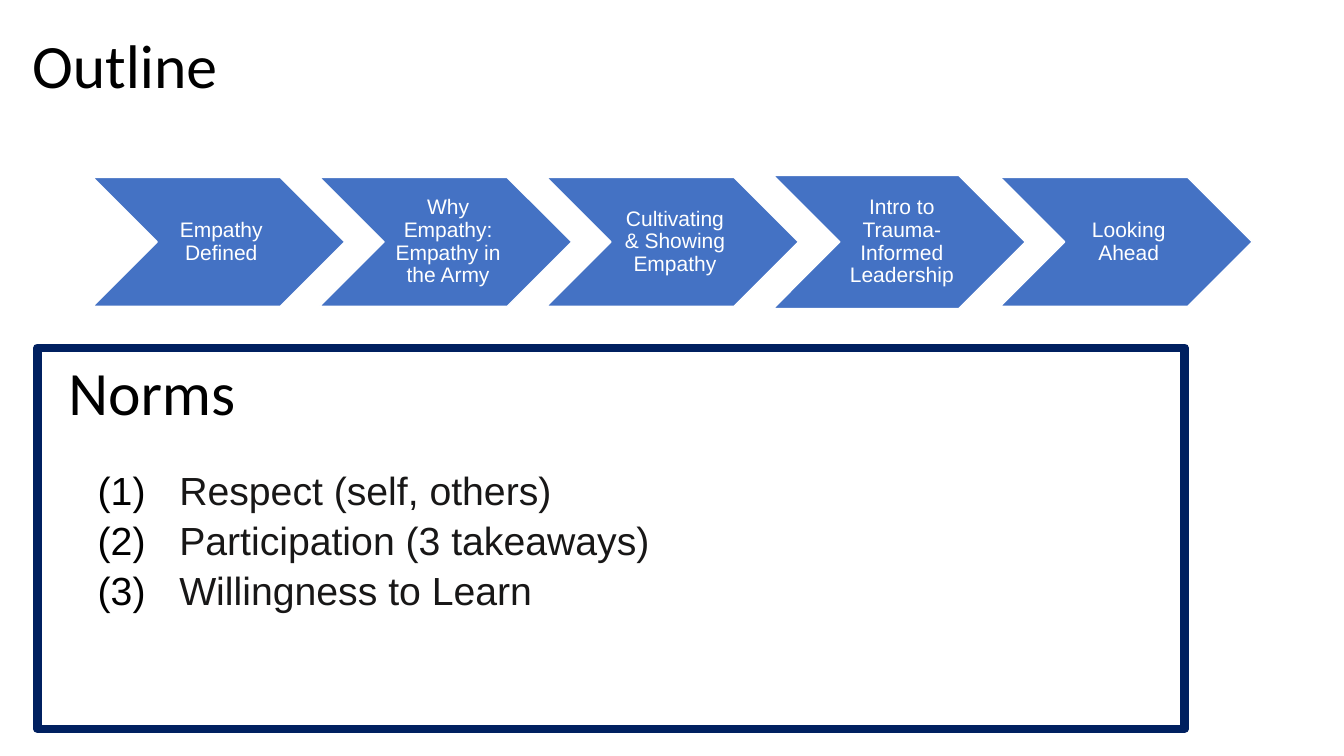
from lxml.etree import SubElement
from pptx import Presentation
from pptx.dml.color import RGBColor
from pptx.enum.shapes import MSO_SHAPE as Shape
from pptx.enum.text import MSO_ANCHOR as Anchor, PP_ALIGN as Align
from pptx.oxml.ns import qn
from pptx.util import Inches, Pt

BLACK = RGBColor(0x00, 0x00, 0x00)
WHITE = RGBColor(0xFF, 0xFF, 0xFF)
BLUE = RGBColor(0x44, 0x72, 0xC4)
NAVY = RGBColor(0x00, 0x20, 0x60)
CHARCOAL = RGBColor(0x18, 0x17, 0x17)


def add_text(paragraph, text, font, size, color, align, spacing):
    paragraph.alignment = align
    paragraph.line_spacing = spacing
    run = paragraph.add_run()
    run.text = text
    run.font.name = font
    run.font.size = Pt(size)
    run.font.color.rgb = color


def add_heading(text, left, top, width, height):
    heading = slide.shapes.add_textbox(
        Inches(left), Inches(top), Inches(width), Inches(height))
    frame = heading.text_frame
    frame.word_wrap = True
    frame.vertical_anchor = Anchor.MIDDLE
    add_text(frame.paragraphs[0], text, "Calibri", 44, BLACK, Align.LEFT, 0.9)
    return heading


prs = Presentation()
prs.slide_width = Inches(13.33)
prs.slide_height = Inches(7.5)
slide = prs.slides.add_slide(prs.slide_layouts[6])

# Outline steps: equal chevrons on one centre line
STEP_LEFT, STEP_PITCH, STEP_WIDTH, STEP_MIDDLE = 0.92, 2.25, 2.5, 2.4
steps = [
    ("Empathy Defined", 1.28),
    ("Why Empathy: Empathy in the Army", 1.28),
    ("Cultivating & Showing Empathy", 1.28),
    ("Intro to Trauma-Informed Leadership", 1.32),
    ("Looking Ahead", 1.28),
]
for i, (label, height) in enumerate(steps):
    step = slide.shapes.add_shape(
        Shape.CHEVRON, Inches(STEP_LEFT + i * STEP_PITCH),
        Inches(STEP_MIDDLE - height / 2), Inches(STEP_WIDTH), Inches(height))
    step.shadow.inherit = False
    step.fill.solid()
    step.fill.fore_color.rgb = BLUE
    step.line.color.rgb = WHITE
    step.line.width = Pt(1)
    frame = step.text_frame
    frame.word_wrap = True
    frame.vertical_anchor = Anchor.MIDDLE
    frame.margin_left = Inches(0.07)
    frame.margin_right = frame.margin_top = frame.margin_bottom = Inches(0.02)
    add_text(frame.paragraphs[0], label, "Arial", 15, WHITE, Align.CENTER, 0.9)

# Norms heading
add_heading("Norms", 0.58, 3.2, 11.5, 1.45)

# Norms frame with its numbered list
norms = slide.shapes.add_shape(
    Shape.RECTANGLE, Inches(0.37), Inches(3.45), Inches(11.38), Inches(3.78))
norms.shadow.inherit = False
norms.fill.background()
norms.line.color.rgb = NAVY
norms.line.width = Pt(6)
frame = norms.text_frame
frame.word_wrap = True
frame.vertical_anchor = Anchor.MIDDLE
rules = ["Respect (self, others)", "Participation (3 takeaways)",
         "Willingness to Learn"]
for i, rule in enumerate(rules):
    paragraph = frame.add_paragraph() if i else frame.paragraphs[0]
    paragraph.level = 1
    add_text(paragraph, rule, "Arial", 28, CHARCOAL, Align.LEFT, 1.07)
    # Black automatic numbers: (1), (2), (3)
    properties = paragraph._p.get_or_add_pPr()
    properties.set("marL", str(Inches(1.31)))
    properties.set("indent", str(Inches(-0.81)))
    number_color = SubElement(properties, qn("a:buClr"))
    SubElement(number_color, qn("a:srgbClr"), val=str(BLACK))
    SubElement(properties, qn("a:buFont"), typeface="Arial")
    SubElement(properties, qn("a:buAutoNum"), type="arabicParenBoth")

# Slide title
title = add_heading("Outline", 0.22, 0.18, 11.5, 0.99)
title.fill.solid()
title.fill.fore_color.rgb = WHITE

prs.save("out.pptx")
